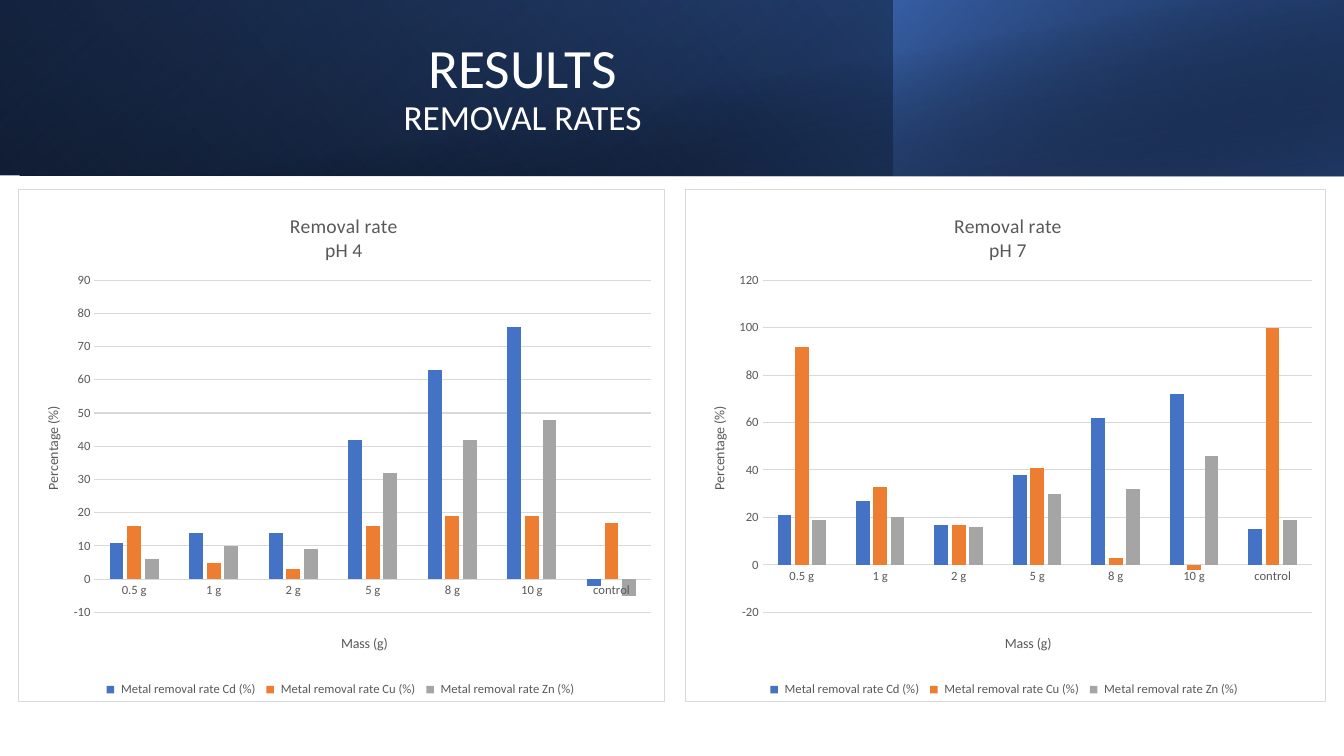
from lxml.etree import SubElement
from pptx import Presentation
from pptx.chart.data import CategoryChartData as ChartData
from pptx.dml.color import RGBColor
from pptx.enum.chart import XL_CHART_TYPE as Kind
from pptx.enum.chart import XL_LEGEND_POSITION as Spot
from pptx.enum.chart import XL_TICK_MARK as Tick
from pptx.enum.shapes import MSO_SHAPE as Form
from pptx.enum.text import MSO_ANCHOR as Anchor
from pptx.enum.text import MSO_AUTO_SIZE as Fit
from pptx.enum.text import PP_ALIGN as Align
from pptx.oxml import parse_xml
from pptx.oxml.ns import nsdecls, qn
from pptx.util import Cm, Pt

FONT = "Calibri"
GREY = "595959"
PALE = "D9D9D9"
MASSES = ["0.5 g", "1 g", "2 g", "5 g", "8 g", "10 g", "control"]
METALS = {"Cd": "4472C4", "Cu": "ED7D31", "Zn": "A5A5A5"}
ACID = [
    [11, 14, 14, 42, 63, 76, -2],
    [16, 5, 3, 16, 19, 19, 17],
    [6, 10, 9, 32, 42, 48, -5],
]
PLAIN = [
    [21, 27, 17, 38, 62, 72, 15],
    [92, 33, 17, 41, 3, -2, 100],
    [19, 20, 16, 30, 32, 46, 19],
]


def paint(code):
    return RGBColor.from_string(code)


def style(font, size, code):
    font.name = FONT
    font.size = Pt(size)
    font.bold = False
    font.color.rgb = paint(code)


def add_run(para, text, size, code):
    run = para.add_run()
    run.text = text
    style(run.font, size, code)


def add_band(slide, left, width, height, angle, stops, flip=True, turn=0):
    band = slide.shapes.add_shape(Form.RECTANGLE, Cm(left), 0, Cm(width), Cm(height))
    band.shadow.inherit = False
    band.line.fill.background()
    band.rotation = turn
    if flip:
        band.element.spPr.get_or_add_xfrm().set("flipH", "1")
    band.fill.gradient()
    band.fill.gradient_angle = angle
    for stop, (place, code, _) in zip(band.fill.gradient_stops, stops):
        stop.position = place / 100
        stop.color.rgb = paint(code)
    inks = band.element.spPr.iter(qn("a:srgbClr"))
    for ink, (_, _, alpha) in zip(list(inks), stops):
        SubElement(ink, qn("a:alpha")).set("val", str(alpha * 1000))


def add_title(slide):
    title = slide.shapes.title
    slide.shapes.element.append(title.element)
    title.left, title.top = Cm(3.81), Cm(0.81)
    title.width, title.height = Cm(18.72), Cm(2.87)
    frame = title.text_frame
    frame.word_wrap = True
    frame.auto_size = Fit.NONE
    frame.vertical_anchor = Anchor.MIDDLE
    para = frame.paragraphs[0]
    para.alignment = Align.CENTER
    para.line_spacing = 0.9
    add_run(para, "RESULTS", 39.6, "FFFFFF")
    para.add_line_break()
    add_run(para, "REMOVAL RATES", 25.2, "FFFFFF")


def lay_out(host, **sides):
    for old in host.findall(qn("c:layout")):
        host.remove(old)
    layout = parse_xml(f"<c:layout {nsdecls('c')}><c:manualLayout/></c:layout>")
    for side in ("x", "y"):
        SubElement(layout[0], qn(f"c:{side}Mode")).set("val", "edge")
    for side, value in sides.items():
        SubElement(layout[0], qn(f"c:{side}")).set("val", str(value))
    if "w" in sides:
        target = SubElement(layout[0], qn("c:layoutTarget"))
        target.set("val", "inner")
        layout[0].insert(0, target)
    host.insert(0 if host.find(qn("c:tx")) is None else 1, layout)


def label(title, lines, size, x, y, turn=0):
    frame = title.text_frame
    for row, text in enumerate(lines):
        para = frame.add_paragraph() if row else frame.paragraphs[0]
        add_run(para, text, size, GREY)
    body = next(title.element.iter(qn("a:bodyPr")))
    body.set("rot", str(turn * 60000))
    body.set("vert", "horz")
    lay_out(title.element, x=x, y=y)


def frame_in(chart):
    box = parse_xml(
        f"<c:spPr {nsdecls('c', 'a')}>"
        '<a:solidFill><a:srgbClr val="FFFFFF"/></a:solidFill>'
        f'<a:ln w="{Pt(0.75)}"><a:solidFill><a:srgbClr val="{PALE}"/>'
        "</a:solidFill></a:ln></c:spPr>"
    )
    chart.element.find(qn("c:chart")).addnext(box)


def set_line(line):
    line.width = Pt(0.75)
    line.color.rgb = paint(PALE)


def set_axes(chart, low, high, step):
    base, scale = chart.category_axis, chart.value_axis
    for axis in (base, scale):
        axis.major_tick_mark = axis.minor_tick_mark = Tick.NONE
        style(axis.tick_labels.font, 9, GREY)
    set_line(base.format.line)
    base.has_major_gridlines = False
    label(base.axis_title, ["Mass (g)"], 10, 0.495, 0.865)
    scale.minimum_scale, scale.maximum_scale = low, high
    scale.major_unit = step
    scale.tick_labels.number_format = "0"
    scale.tick_labels.number_format_is_linked = False
    scale.format.line.fill.background()
    set_line(scale.major_gridlines.format.line)
    label(scale.axis_title, ["Percentage (%)"], 10, 0.035, 0.42, -90)


def add_rates(slide, left, width, name, rates, span, inner):
    data = ChartData(number_format="0")
    data.categories = MASSES
    for metal, values in zip(METALS, rates):
        data.add_series(f" Metal removal rate {metal} (%) ", values)
    chart = slide.shapes.add_chart(
        Kind.COLUMN_CLUSTERED, Cm(left), Cm(4.75), Cm(width), Cm(12.93), data
    ).chart
    style(chart.font, 10, "000000")
    frame_in(chart)
    label(chart.chart_title, ["Removal rate", name], 14, 0.415, 0.04)
    chart.chart_title.include_in_layout = False
    chart.has_legend = True
    chart.legend.position = Spot.BOTTOM
    chart.legend.include_in_layout = False
    style(chart.legend.font, 9, GREY)
    plot = chart.plots[0]
    plot.vary_by_categories = False
    plot.gap_width, plot.overlap = 219, -27
    for bars, code in zip(plot.series, METALS.values()):
        bars.invert_if_negative = False
        bars.format.fill.solid()
        bars.format.fill.fore_color.rgb = paint(code)
    set_axes(chart, *span)
    x, w = inner
    lay_out(next(chart.element.iter(qn("c:plotArea"))), x=x, y=0.178, w=w, h=0.649)


def main():
    deck = Presentation()
    deck.slide_width, deck.slide_height = Cm(33.87), Cm(19.05)
    slide = deck.slides.add_slide(deck.slide_layouts[5])
    add_band(slide, 0, 33.87, 4.42, 140, [(0, "000000", 100), (100, "2F5597", 100)])
    add_band(slide, 0, 22.56, 4.42, 230, [(20, "4472C4", 0), (100, "203864", 55)], turn=180)
    add_band(slide, 22.53, 11.33, 4.42, 220, [(0, "4472C4", 66), (100, "000000", 30)])
    add_band(slide, 1.27, 32.6, 4.44, 280, [(50, "000000", 0), (99, "203864", 52)], flip=False)
    add_title(slide)
    add_rates(slide, 0.46, 16.31, "pH 4", ACID, (-10, 90, 10), (0.117, 0.862))
    add_rates(slide, 17.25, 16.18, "pH 7", PLAIN, (-20, 120, 20), (0.121, 0.857))
    deck.save("out.pptx")


if __name__ == "__main__":
    main()
